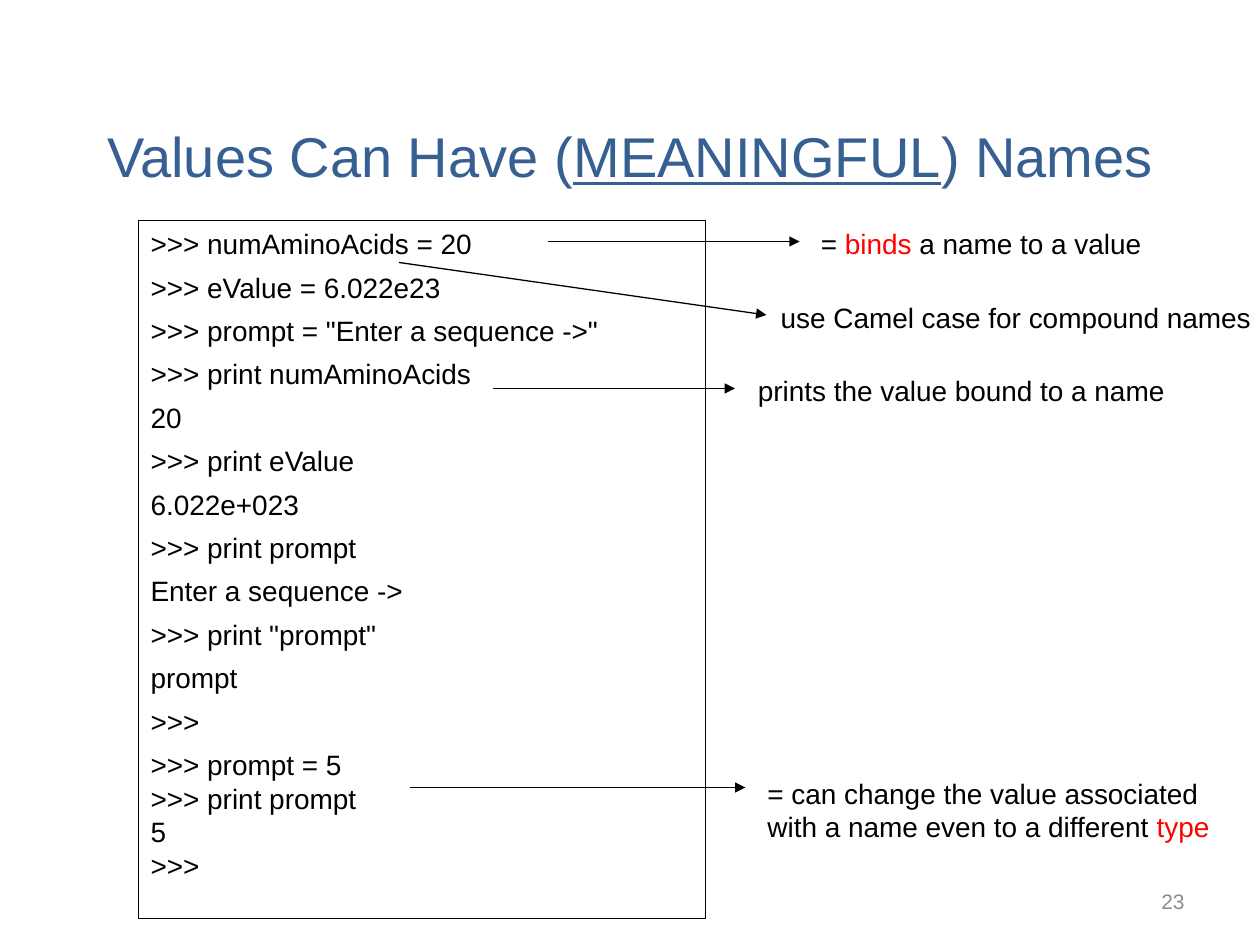
import pptx
import pptx.util
import pptx.dml.color
import pptx.enum.shapes
import pptx.enum.text
import pptx.oxml
import pptx.oxml.ns

Pt = pptx.util.Pt
ALIGN = pptx.enum.text.PP_ALIGN
ANCHOR = pptx.enum.text.MSO_ANCHOR
AUTO_SIZE = pptx.enum.text.MSO_AUTO_SIZE
COLORS = {"title": "376092", "text": "000000", "accent": "FF0000", "number": "8C8C8C"}

SPACED_CODE = [
    ">>> numAminoAcids = 20",
    ">>> eValue = 6.022e23",
    '>>> prompt = "Enter a sequence ->"',
    ">>> print numAminoAcids",
    "20",
    ">>> print eValue",
    "6.022e+023",
    ">>> print prompt",
    "Enter a sequence ->",
    '>>> print "prompt"',
    "prompt",
    ">>>",
]
TIGHT_CODE = [">>> prompt = 5", ">>> print prompt", "5", ">>>"]

# Each note: box, lines of (text, color) runs, arrow start and end
NOTES = [
    ((462, 126, 200, 26.6),
     [[("= ", "text"), ("binds", "accent"), (" a name to a value", "text")]],
     (313, 138), (457, 138)),
    ((439, 168, 286.6, 26.6),
     [[("use Camel case for compound names", "text")]],
     (228, 150), (438, 180)),
    ((426, 210, 250, 26.6),
     [[("prints the value bound to a name", "text")]],
     (282, 222), (420, 222)),
    ((431.5, 440, 270.7, 46),
     [[("= can change the value associated", "text")],
      [("with a name even to a different ", "text"), ("type", "accent")]],
     (234, 450), (426, 450)),
]


def color(name):
    return pptx.dml.color.RGBColor.from_string(COLORS[name])


def add_run(paragraph, text, size=16, fill="text", underline=None):
    run = paragraph.add_run()
    run.text = text
    run.font.name = "Arial"
    run.font.size = Pt(size)
    run.font.color.rgb = color(fill)
    run.font.underline = underline


def add_paragraph(frame, index, align=ALIGN.LEFT, space_after=0):
    paragraph = frame.add_paragraph() if index else frame.paragraphs[0]
    paragraph.alignment = align
    paragraph.space_after = Pt(space_after)
    return paragraph


def add_title(slide, box):
    title = slide.shapes.title
    title.left, title.top, title.width, title.height = map(Pt, box)
    frame = title.text_frame
    frame.auto_size = AUTO_SIZE.NONE
    frame.vertical_anchor = ANCHOR.TOP
    paragraph = add_paragraph(frame, 0, align=ALIGN.CENTER)
    add_run(paragraph, "Values Can Have (", size=32, fill="title")
    add_run(paragraph, "MEANINGFUL", size=32, fill="title", underline=True)
    add_run(paragraph, ") Names", size=32, fill="title")


def add_code(slide, box):
    shape = slide.shapes.add_shape(pptx.enum.shapes.MSO_SHAPE.RECTANGLE, *map(Pt, box))
    shape.shadow.inherit = False
    shape.fill.background()
    shape.line.color.rgb = color("text")
    shape.line.width = Pt(0.75)
    frame = shape.text_frame
    frame.word_wrap = True
    frame.vertical_anchor = ANCHOR.TOP
    for index, line in enumerate(SPACED_CODE + TIGHT_CODE):
        space_after = 5.6 if index < len(SPACED_CODE) else 0
        add_run(add_paragraph(frame, index, space_after=space_after), line)


def add_arrow(slide, start, end):
    arrow = slide.shapes.add_connector(
        pptx.enum.shapes.MSO_CONNECTOR.STRAIGHT, *map(Pt, start + end))
    arrow.line.color.rgb = color("text")
    arrow.line.width = Pt(0.75)
    tail = pptx.oxml.parse_xml(
        f'<a:tailEnd {pptx.oxml.ns.nsdecls("a")} type="triangle"/>')
    arrow.line._get_or_add_ln().append(tail)
    effects = pptx.oxml.parse_xml(f'<a:effectLst {pptx.oxml.ns.nsdecls("a")}/>')
    arrow._element.spPr.append(effects)


def add_note(slide, box, lines):
    frame = slide.shapes.add_textbox(*map(Pt, box)).text_frame
    frame.word_wrap = False
    frame.auto_size = AUTO_SIZE.SHAPE_TO_FIT_TEXT
    for index, runs in enumerate(lines):
        paragraph = add_paragraph(frame, index)
        for text, fill in runs:
            add_run(paragraph, text, fill=fill)


def add_slide_number(slide, box):
    frame = slide.shapes.add_textbox(*map(Pt, box)).text_frame
    frame.word_wrap = True
    frame.vertical_anchor = ANCHOR.MIDDLE
    add_run(add_paragraph(frame, 0, align=ALIGN.RIGHT), "23", size=12, fill="number")


def main():
    presentation = pptx.Presentation()
    presentation.slide_width = Pt(720)
    presentation.slide_height = Pt(540)
    slide = presentation.slides.add_slide(presentation.slide_layouts[5])

    add_title(slide, (36, 66, 648, 70))
    add_slide_number(slide, (516, 500.5, 168, 28.8))
    add_code(slide, (79, 126, 324, 399))
    for box, lines, start, end in NOTES:
        add_arrow(slide, start, end)
        add_note(slide, box, lines)

    presentation.save("out.pptx")


if __name__ == "__main__":
    main()
